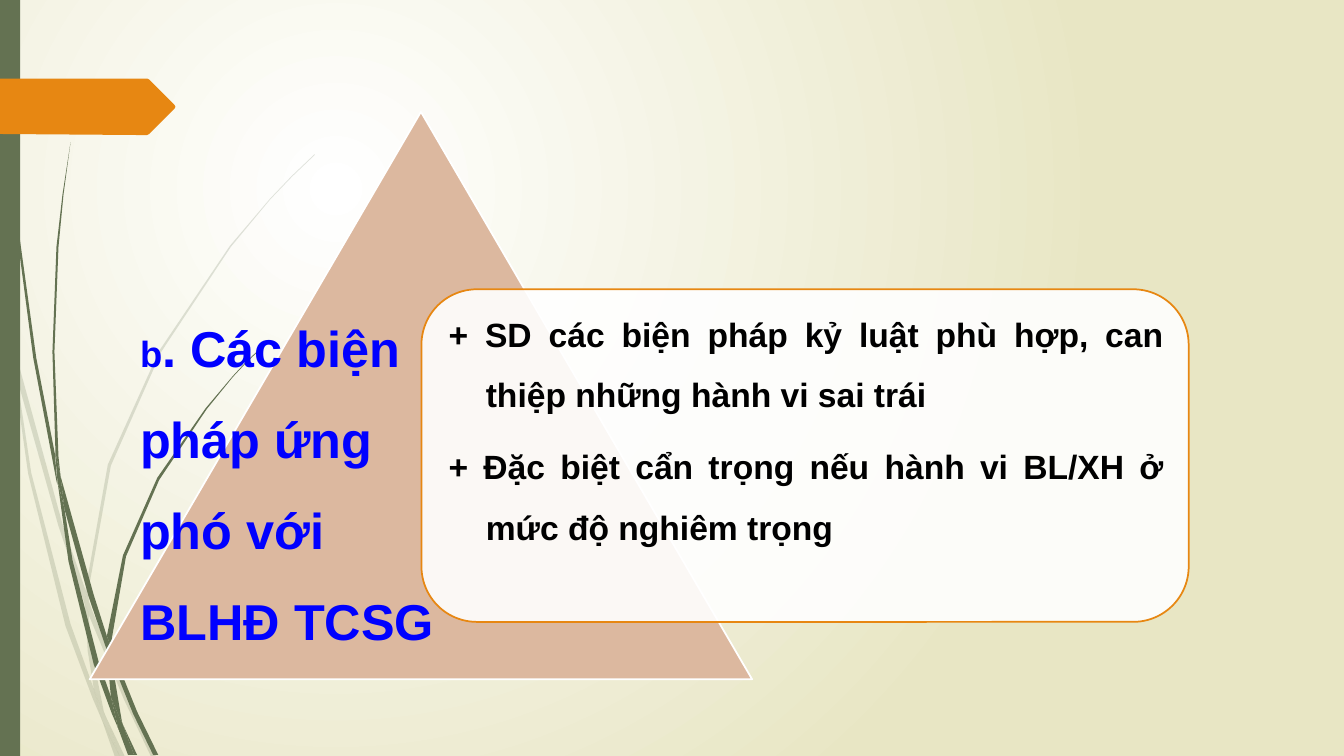
from lxml import etree
from pptx import Presentation
from pptx import util as u
from pptx.dml.color import RGBColor
from pptx.enum import shapes, text
from pptx.oxml.ns import qn

PX = 9144
FONT = "Arial"
COLORS = {
    "white": "FFFFFF", "cream": "E8E6C4", "green": "647252", "orange": "E78712",
    "tan": "DCB89F", "blue": "0000FF", "black": "000000",
}
PALE_GRASS = [
    [(11, 350), (9, 322), (0, 282), (0, 299), (10, 344)],
    [(58, 522), (84, 599), (85, 586), (62, 520), (14, 345), (17, 376)],
    [(92, 607), (88, 596), (88, 610), (123, 694), (150, 751), (155, 751), (127, 692)],
    [(119, 751), (124, 751), (105, 711)],
    [(93, 683), (70, 619), (31, 469), (17, 376), (11, 350), (28, 470), (65, 621),
     (92, 693), (101, 714), (99, 707)],
    [(84, 599), (87, 646), (93, 683), (96, 692), (105, 711), (103, 706), (91, 646),
     (88, 610), (88, 608)],
    [(88, 584), (110, 462), (160, 349), (229, 245), (268, 198), (290, 175), (312, 154),
     (312, 153), (289, 175), (268, 197), (228, 244), (158, 348), (107, 461), (85, 584),
     (85, 586), (88, 596)],
    [(101, 714), (114, 751), (119, 751)],
    [(88, 608), (88, 610), (88, 596), (85, 586), (84, 599)],
    [(96, 692), (93, 683), (99, 707), (101, 714), (119, 751), (105, 711)],
]
DARK_GRASS = [
    [(7, 110), (17, 233), (33, 355), (56, 477), (57, 481), (55, 457), (55, 453),
     (36, 355), (19, 232), (8, 109), (5, 48), (4, 0), (3, 0), (4, 48)],
    [(88, 592), (106, 645), (106, 633), (106, 631), (93, 590), (60, 472), (64, 505)],
    [(113, 649), (110, 641), (111, 656), (132, 708), (152, 749), (157, 749), (136, 706)],
    [(110, 691), (98, 657), (72, 556), (64, 505), (57, 477), (68, 557), (93, 659),
     (111, 708), (117, 722), (116, 717)],
    [(60, 472), (58, 453), (54, 349), (58, 245), (63, 193), (70, 141), (62, 193),
     (56, 245), (52, 349), (55, 449)],
    [(133, 749), (136, 749), (122, 719)],
    [(57, 477), (64, 505), (60, 472), (55, 449), (55, 453)],
    [(111, 633), (125, 552), (158, 476), (205, 406), (231, 374), (245, 359), (261, 344),
     (260, 344), (245, 358), (231, 373), (204, 405), (156, 474), (122, 551), (106, 631),
     (110, 641)],
    [(117, 722), (127, 749), (131, 749)],
    [(106, 645), (110, 691), (116, 706), (122, 719), (121, 716), (111, 656), (109, 651)],
    [(106, 645), (109, 651), (111, 656), (110, 641), (106, 631), (106, 633)],
    [(116, 706), (110, 691), (116, 717), (117, 722), (130, 749), (133, 749), (122, 719)],
]
ARROW = [(173, 108), (148, 133), (146, 134), (136, 134), (0, 133), (0, 78), (136, 78),
         (146, 78), (148, 79), (173, 104), (174, 106)]
MEASURES = [
    "+ SD các biện pháp kỷ luật phù hợp, can thiệp những hành vi sai trái",
    "+ Đặc biệt cẩn trọng nếu hành vi BL/XH ở mức độ nghiêm trọng",
]


def px(n):
    return u.Emu(n * PX)


def rgb(name):
    return RGBColor.from_string(COLORS[name])


def paint(sp, fill, line=None, opacity=100):
    sp.shadow.inherit = False
    sp.fill.solid()
    sp.fill.fore_color.rgb = rgb(fill)
    if opacity < 100:
        clr = sp._element.spPr.find(qn("a:solidFill"))[0]
        etree.SubElement(clr, qn("a:alpha"), val=str(opacity * 1000))
    if line:
        sp.line.color.rgb = rgb(line)
        sp.line.width = u.Pt(1.25)
    else:
        sp.line.fill.background()


def add_preset(s, kind, box, fill, line=None, opacity=100):
    sp = s.shapes.add_shape(kind, *map(px, box))
    paint(sp, fill, line, opacity)


def add_outline(parent, points, fill, opacity=100):
    builder = parent.shapes.build_freeform(*points[0], scale=PX)
    builder.add_line_segments(points[1:])
    paint(builder.convert_to_shape(), fill, opacity=opacity)


def add_grass(s, pieces, opacity):
    group = s.shapes.add_group_shape()
    for points in pieces:
        add_outline(group, points, "green", opacity)


def set_background(s):
    fill = s.background.fill
    fill.gradient()
    for stop, name in zip(fill.gradient_stops, ("white", "cream")):
        stop.color.rgb = rgb(name)
    grad = s._element.find(".//" + qn("a:gradFill"))
    lin = grad.find(qn("a:lin"))
    circle = etree.Element(qn("a:path"), {"path": "circle"})
    etree.SubElement(circle, qn("a:fillToRect"), l="50000", t="50000", r="100000", b="100000")
    grad.replace(lin, circle)


def style_run(r, size, color):
    r.font.name = FONT
    r.font.size = u.Pt(size)
    r.font.bold = True
    r.font.color.rgb = rgb(color)


def add_measures(s, box):
    tf = s.shapes.add_textbox(*map(px, box)).text_frame
    tf.word_wrap = True
    tf.margin_top = 0
    tf.text = "\n".join(MEASURES)
    for p in tf.paragraphs:
        p.alignment = text.PP_ALIGN.JUSTIFY
        p.line_spacing = 1.5
        p.space_after = u.Pt(8.4)
        pPr = p._p.get_or_add_pPr()
        pPr.set("marL", str(px(37)))
        pPr.set("indent", str(-px(37)))
        style_run(p.runs[0], 24, "black")


def set_title(s, box):
    sp = s.shapes.title
    sp.left, sp.top, sp.width, sp.height = map(px, box)
    s.shapes._spTree.append(sp._element)
    tf = sp.text_frame
    tf.word_wrap = True
    tf.auto_size = text.MSO_AUTO_SIZE.NONE
    tf.vertical_anchor = text.MSO_ANCHOR.TOP
    p = tf.paragraphs[0]
    p.alignment = text.PP_ALIGN.LEFT
    p.line_spacing = 1.5
    for words, size in (("b", 26), (". Các biện pháp ứng phó với BLHĐ TCSG", 36)):
        r = p.add_run()
        r.text = words
        style_run(r, size, "blue")


def main():
    prs = Presentation()
    prs.slide_width, prs.slide_height = u.Inches(13.33), u.Inches(7.5)
    s = prs.slides.add_slide(prs.slide_layouts[5])
    set_background(s)
    add_grass(s, PALE_GRASS, 20)
    add_grass(s, DARK_GRASS, 100)
    kind = shapes.MSO_SHAPE
    add_preset(s, kind.RECTANGLE, (0, 0, 20, 750), "green")
    add_outline(s, ARROW, "orange")
    add_preset(s, kind.ISOSCELES_TRIANGLE, (89, 111, 657, 563), "tan", "white")
    add_preset(s, kind.ROUNDED_RECTANGLE, (418, 287, 761, 330), "white", "orange", 90)
    add_measures(s, (435, 291, 729, 298))
    set_title(s, (129, 280, 328, 374))
    prs.save("out.pptx")


if __name__ == "__main__":
    main()
